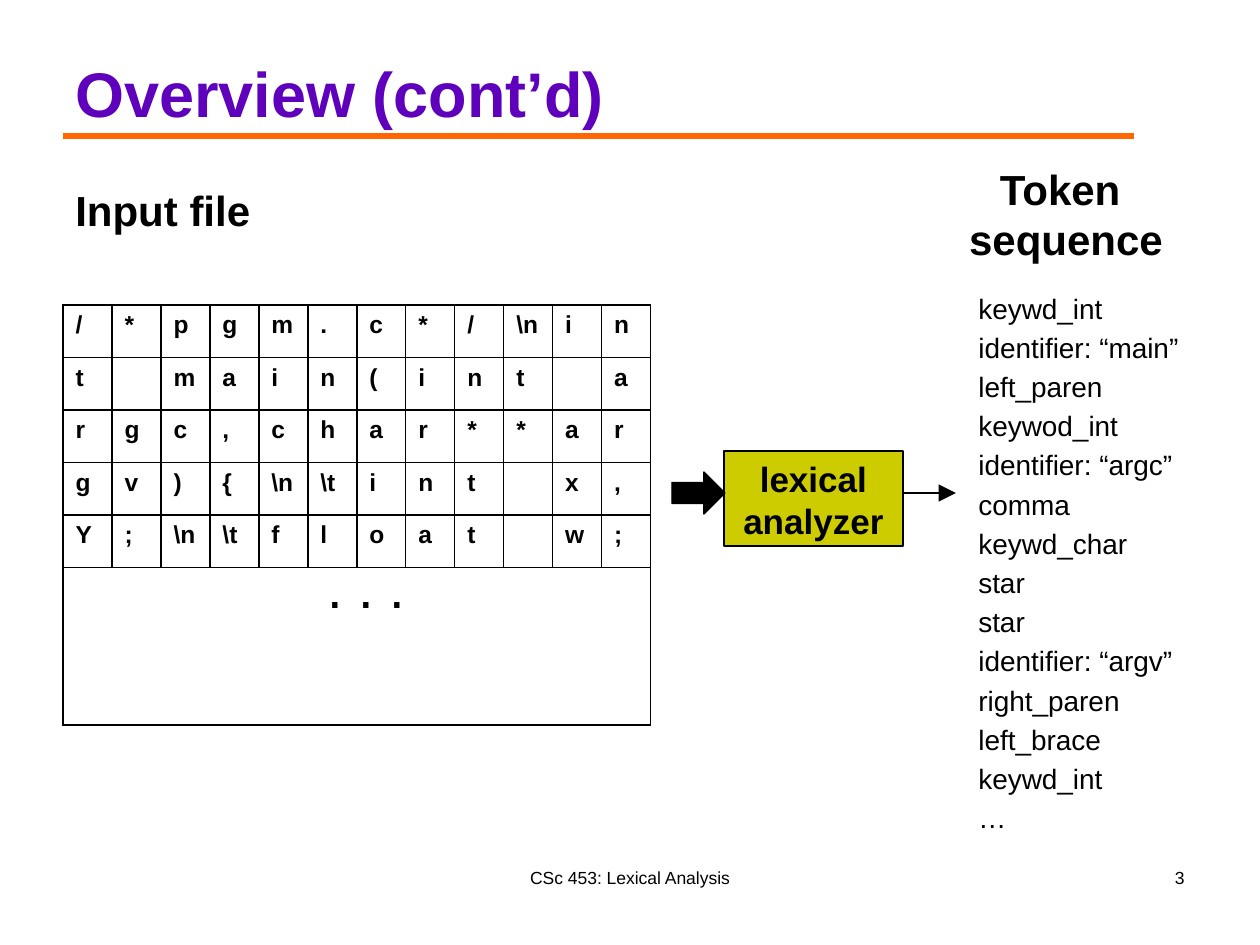
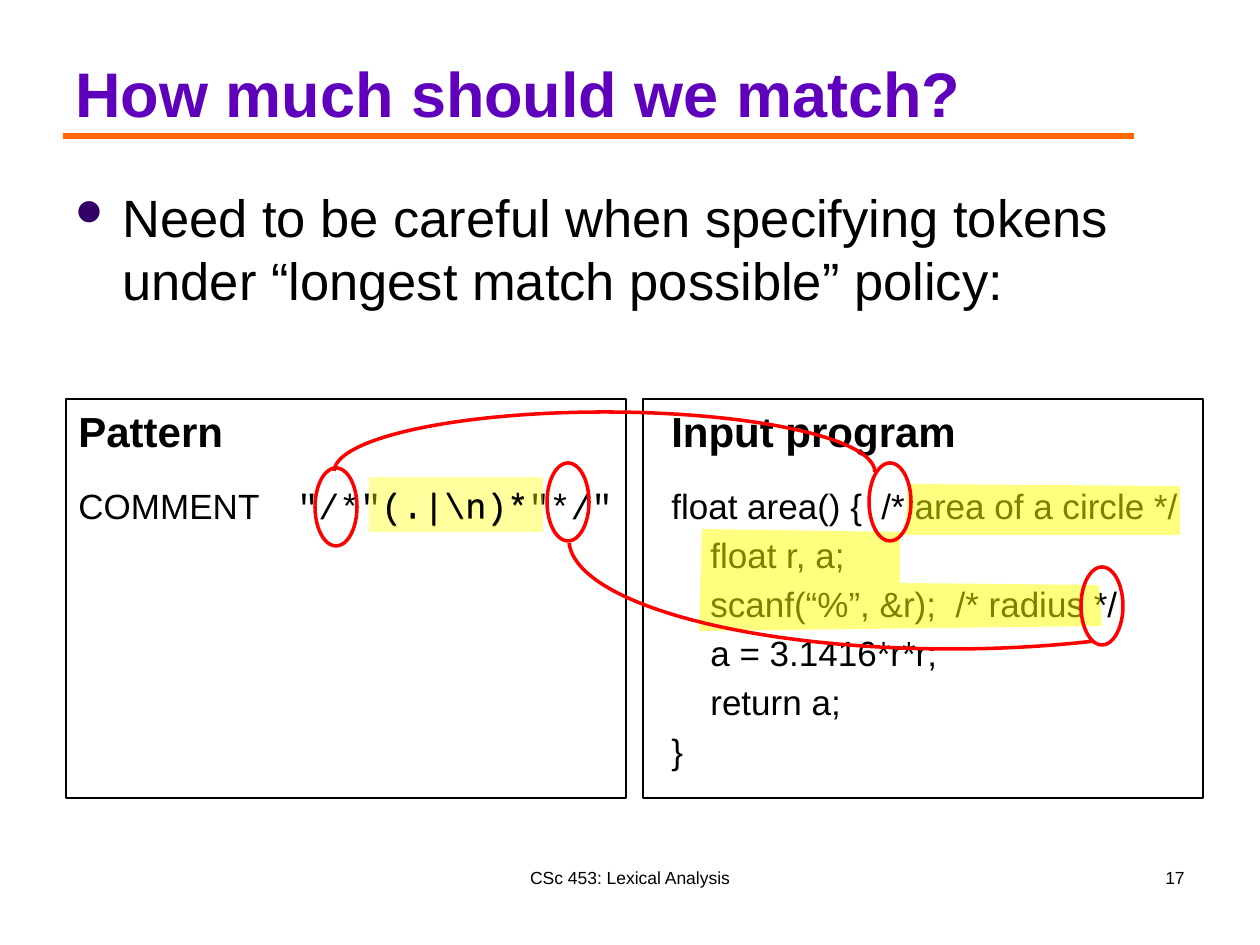
from lxml.etree import SubElement
from pptx import Presentation
from pptx.dml.color import RGBColor
from pptx.enum.shapes import MSO_CONNECTOR, MSO_SHAPE
from pptx.enum.text import MSO_ANCHOR, PP_ALIGN
from pptx.oxml import parse_xml
from pptx.oxml.ns import nsdecls, qn
from pptx.util import Inches, Pt

PX = 7257  # EMU in one px, 126 px to the inch
HEX = {"title": "5E00BC", "rule": "FF6600", "ink": "000000", "paper": "FFFFFF",
       "box": "CCCC00", "dot": "330066", "mark": "FFFF00", "ring": "FF0000"}
RGB = {name: RGBColor.from_string(code) for name, code in HEX.items()}
LEFT, MID, RIGHT = PP_ALIGN.LEFT, PP_ALIGN.CENTER, PP_ALIGN.RIGHT


def put(slide, box, lines=(), size=20, bold=False, color="ink", align=LEFT,
        gap=0, wrap=True, kind=None, fill=None, line=None, width=0.75):
    """Add a text box, or a preset shape if kind is given, with one paragraph a line."""
    place = [n * PX for n in box]
    if kind is None:
        shape = slide.shapes.add_textbox(*place)
    else:
        shape = slide.shapes.add_shape(kind, *place)
        shape.shadow.inherit = False
        shape.fill.background()
        shape.line.fill.background()
    if fill:
        shape.fill.solid()
        shape.fill.fore_color.rgb = RGB[fill]
    if line:
        shape.line.color.rgb = RGB[line]
        shape.line.width = Pt(width)
    frame = shape.text_frame
    frame.word_wrap = wrap
    frame.vertical_anchor = MSO_ANCHOR.TOP
    for i, words in enumerate(lines):
        para = frame.add_paragraph() if i else frame.paragraphs[0]
        para.text = words
        para.alignment = align
        para.space_before = Pt(gap)
        para.font.name = "Arial"
        para.font.size = Pt(size)
        para.font.bold = bold
        para.font.color.rgb = RGB[color]
    return shape


def link(slide, start, end, color, width):
    line = slide.shapes.add_connector(
        MSO_CONNECTOR.STRAIGHT, *[n * PX for n in start + end])
    line.line.color.rgb = RGB[color]
    line.line.width = Pt(width)
    SubElement(line._element.spPr, qn("a:effectLst"))
    return line


deck = Presentation()
deck.slide_width, deck.slide_height = Inches(10), Inches(7.5)

# Shared rule, title and footer
pages = []
for title, number in (("Overview (cont’d)", "3"), ("How much should we match?", "17")):
    page = deck.slides.add_slide(deck.slide_layouts[6])
    link(page, (63, 136), (1134, 136), "rule", 3.75)
    head = put(page, (63, 16, 1134, 120), [title], 36, True, "title")
    head.text_frame.vertical_anchor = MSO_ANCHOR.BOTTOM
    put(page, (430, 861, 400, 63), ["CSc 453: Lexical Analysis"], 10, align=MID)
    put(page, (903, 861, 294, 63), [number], 10, align=RIGHT)
    pages.append(page)
flow, match = pages

# Slide 1: the input file as a grid of characters, with one open block below
chars = [
    ["/", "*", "p", "g", "m", ".", "c", "*", "/", "\\n", "i", "n"],
    ["t", "", "m", "a", "i", "n", "(", "i", "n", "t", "", "a"],
    ["r", "g", "c", ",", "c", "h", "a", "r", "*", "*", "a", "r"],
    ["g", "v", ")", "{", "\\n", "\\t", "i", "n", "t", "", "x", ","],
    ["Y", ";", "\\n", "\\t", "f", "l", "o", "a", "t", "", "w", ";"],
]
full, cols = len(chars), len(chars[0])
rows = full + 3
grid = flow.shapes.add_table(rows, cols, 63 * PX, 305 * PX, 588 * PX, 420 * PX).table
grid.first_row = grid.horz_banding = False
for r in range(rows):
    for c in range(cols):
        cell = grid.cell(r, c)
        if r < full:
            cell.text = chars[r][c]
        font = cell.text_frame.paragraphs[0].font
        font.name, font.size, font.bold = "Arial", Pt(14), True
        font.color.rgb = RGB["ink"]
        props = cell._tc.get_or_add_tcPr()
        sides = {"lnL": r < full or c == 0, "lnR": r < full or c == cols - 1,
                 "lnT": r <= full, "lnB": r < full or r == rows - 1}
        for side, drawn in sides.items():
            paint = (f'<a:solidFill><a:srgbClr val="{HEX["ink"]}"/></a:solidFill>'
                     if drawn else "<a:noFill/>")
            props.append(parse_xml(
                f'<a:{side} {nsdecls("a")} w="12700">{paint}</a:{side}>'))
        cell.fill.solid()
        cell.fill.fore_color.rgb = RGB["paper"]

put(flow, (724, 451, 179, 95), ["lexical", "analyzer"], 20, True, align=MID,
    kind=MSO_SHAPE.RECTANGLE, fill="box", line="ink")
put(flow, (672, 472, 53, 42), kind=MSO_SHAPE.RIGHT_ARROW, fill="ink", line="ink")
tokens = ["keywd_int", "identifier: “main”", "left_paren", "keywod_int",
          "identifier: “argc”", "comma", "keywd_char", "star", "star",
          "identifier: “argv”", "right_paren", "left_brace", "keywd_int", "…"]
put(flow, (966, 285, 252, 570), tokens, 16, gap=3.2)
arrow = link(flow, (903, 493), (956, 493), "ink", 0.75)
SubElement(arrow.line._get_or_add_ln(), qn("a:tailEnd"), type="triangle",
           w="lg", len="lg")
put(flow, (63, 178, 202, 64), ["Input file"], 24, True, wrap=False)
put(flow, (955, 157, 222, 115), ["Token ", "sequence"], 24, True, align=MID, wrap=False)
put(flow, (315, 546, 103, 81), [". . ."], 32)

# Slide 2: the bullet
need = put(match, (63, 179, 1134, 147), [
    "Need to be careful when specifying tokens under “longest match possible” policy:"],
    30, gap=6)
props = need.text_frame.paragraphs[0]._p.get_or_add_pPr()
props.set("marL", str(47 * PX))
props.set("indent", str(-47 * PX))
color = SubElement(props, qn("a:buClr"))
SubElement(color, qn("a:srgbClr"), val=HEX["dot"])
SubElement(props, qn("a:buSzPct"), val="70000")
SubElement(props, qn("a:buFont"), typeface="Wingdings", charset="2")
SubElement(props, qn("a:buChar"), char="l")

# Pattern and program
put(match, (66, 399, 557, 69), ["Pattern"], 24, True, gap=4.8)
rule = put(match, (66, 478, 561, 289), ["COMMENT\t"], gap=4).text_frame.paragraphs[0]
run = rule.add_run()
run.text = "″/*″(.|\\n)*″*/″"
run.font.name = "Courier New"
tabs = SubElement(rule._p.get_or_add_pPr(), qn("a:tabLst"))
SubElement(tabs, qn("a:tab"), pos=str(219 * PX), algn="l")

put(match, (659, 399, 557, 69), ["Input program"], 24, True, gap=4.8)
code = ["float area() {  /* area of a circle */", "float r, a;",
        "scanf(“%”, &r);  /* radius */", "a = 3.1416*r*r;", "return a;", "}"]
body = put(match, (659, 478, 539, 310), code, gap=4)
for para in body.text_frame.paragraphs[1:-1]:
    para._p.get_or_add_pPr().set("marL", str(39 * PX))

# Highlights
inner = put(match, (369, 477, 174, 55), ["(.|\\n)*"], wrap=False,
            kind=MSO_SHAPE.RECTANGLE, fill="mark")
inner.text_frame.paragraphs[0].font.name = "Courier New"
edge = [(908, 484), (1180, 486), (1180, 535), (900, 535), (900, 583), (1099, 585),
        (1102, 626), (699, 631), (702, 529), (905, 532)]
pen = match.shapes.build_freeform(*edge[0], scale=PX)
pen.add_line_segments(edge[1:])
swath = pen.convert_to_shape()
swath.shadow.inherit = False
swath.line.fill.background()
swath.fill.solid()
swath.fill.fore_color.rgb = RGB["mark"]
for shape, alpha in ((inner, 38), (swath, 50)):
    tint = shape._element.spPr.find(qn("a:solidFill")).find(qn("a:srgbClr"))
    SubElement(tint, qn("a:alpha"), val=str(alpha * 1000))

# Frames, rings and the arcs that join them
for x in (66, 643):
    put(match, (x, 399, 560, 399), kind=MSO_SHAPE.RECTANGLE, line="ink")
for x, y in ((315, 468), (869, 463), (547, 463), (1081, 567)):
    put(match, (x, y, 42, 78), kind=MSO_SHAPE.OVAL, line="ring", width=2)
for box, start, end in (((334, 412, 541, 120), 108.14, 0),
                        ((569, 430, 765, 219), 21.45, 107.68)):
    arc = put(match, box, kind=MSO_SHAPE.ARC, line="ring", width=2)
    arc.adjustments[0], arc.adjustments[1] = start, end

deck.save("out.pptx")
